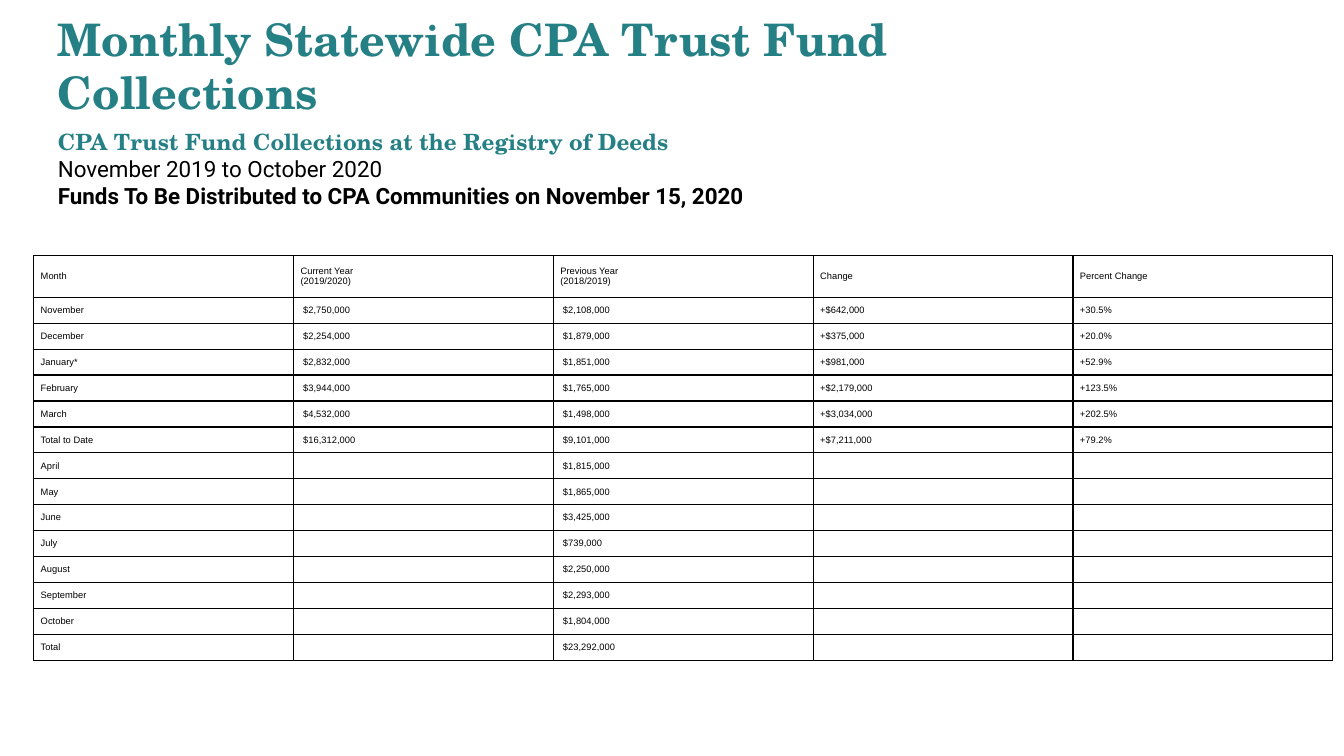
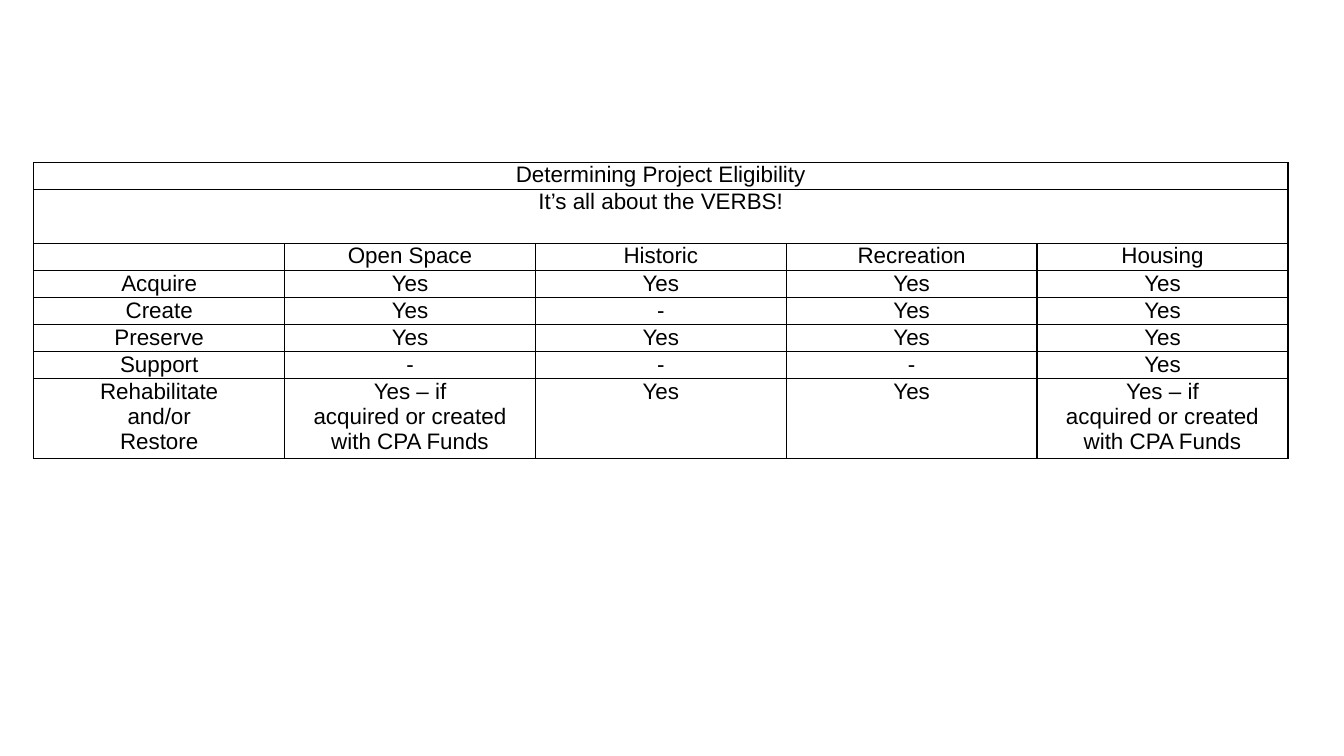
from lxml.etree import SubElement
from pptx import Presentation
from pptx.dml.color import RGBColor
from pptx.enum.text import MSO_ANCHOR, MSO_AUTO_SIZE, PP_ALIGN
from pptx.oxml.ns import qn
from pptx.util import Cm, Pt

TEAL = "258085"
BLACK = "000000"
HEADING_FONT = "TeX Gyre Schola"
TABLE_LEFT = 0.64


def write(text_frame, text, size, font="Arial", color=BLACK, bold=False,
          align=PP_ALIGN.LEFT, space_before=0):
    """Add each line of text as a paragraph, filling an empty first one."""
    for line in text.split("\n"):
        paragraph = text_frame.paragraphs[0]
        if paragraph.runs:
            paragraph = text_frame.add_paragraph()
        paragraph.text = line
        paragraph.alignment = align
        paragraph.space_before = Pt(space_before)
        for run in paragraph.runs:
            run.font.size = Pt(size)
            run.font.name = font
            run.font.bold = bold
            run.font.color.rgb = RGBColor.from_string(color)
        if not line:
            paragraph._p.get_or_add_endParaRPr().set("sz", str(size * 100))


def draw_table(slide, rows, top, column_width, row_heights, side_margin, end_margin,
               size, align, anchor):
    """Draw a bordered table; a row with a single text spans all columns."""
    columns = max(len(row) for row in rows)
    table = slide.shapes.add_table(
        len(rows), columns, Cm(TABLE_LEFT), Cm(top),
        Cm(column_width * columns), Cm(sum(row_heights))).table
    table.first_row = table.horz_banding = False
    for column in table.columns:
        column.width = Cm(column_width)
    for row_index, texts in enumerate(rows):
        table.rows[row_index].height = Cm(row_heights[row_index])
        for column_index in range(columns):
            cell = table.cell(row_index, column_index)
            cell.margin_left = cell.margin_right = Cm(side_margin)
            cell.margin_top = cell.margin_bottom = Cm(end_margin)
            cell.vertical_anchor = anchor
            text = texts[column_index] if column_index < len(texts) else ""
            write(cell.text_frame, text, size, align=align)
            properties = cell._tc.get_or_add_tcPr()
            for side in ("a:lnL", "a:lnR", "a:lnT", "a:lnB"):
                border = SubElement(properties, qn(side), w=str(Pt(0.75)))
                border_fill = SubElement(border, qn("a:solidFill"))
                SubElement(border_fill, qn("a:srgbClr"), val=BLACK)
            cell.fill.background()
        if len(texts) == 1:
            table.cell(row_index, 0).merge(table.cell(row_index, columns - 1))
    return table


presentation = Presentation()
presentation.slide_width = Cm(25.4)
presentation.slide_height = Cm(14.29)

# Slide 1: monthly collections
slide = presentation.slides.add_slide(presentation.slide_layouts[5])
collections = [
    ("Month", "Current Year\n(2019/2020)", "Previous Year\n(2018/2019)",
     "Change", "Percent Change"),
    ("November", "$2,750,000", "$2,108,000", "+$642,000", "+30.5%"),
    ("December", "$2,254,000", "$1,879,000", "+$375,000", "+20.0%"),
    ("January*", "$2,832,000", "$1,851,000", "+$981,000", "+52.9%"),
    ("February", "$3,944,000", "$1,765,000", "+$2,179,000", "+123.5%"),
    ("March", "$4,532,000", "$1,498,000", "+$3,034,000", "+202.5%"),
    ("Total to Date", "$16,312,000", "$9,101,000", "+$7,211,000", "+79.2%"),
    ("April", "", "$1,815,000"),
    ("May", "", "$1,865,000"),
    ("June", "", "$3,425,000"),
    ("July", "", "$739,000"),
    ("August", "", "$2,250,000"),
    ("September", "", "$2,293,000"),
    ("October", "", "$1,804,000"),
    ("Total", "", "$23,292,000"),
]
collections_table = draw_table(
    slide, collections, top=4.83, column_width=4.91,
    row_heights=[0.79] + [0.49] * 14, side_margin=0.13, end_margin=0.08,
    size=5, align=PP_ALIGN.LEFT, anchor=MSO_ANCHOR.MIDDLE)
for row_index in range(1, len(collections)):
    for column_index in (1, 2):
        collections_table.cell(row_index, column_index).margin_left = Cm(0.18)

title = slide.shapes.title
title.left, title.top, title.width, title.height = Cm(0.84), Cm(0.58), Cm(21.08), Cm(3)
heading = title.text_frame
heading.word_wrap = True
heading.auto_size = MSO_AUTO_SIZE.NONE
heading.vertical_anchor = MSO_ANCHOR.MIDDLE
write(heading, "Monthly Statewide CPA Trust Fund Collections", 24,
      font=HEADING_FONT, color=TEAL, bold=True)
write(heading, "CPA Trust Fund Collections at the Registry of Deeds", 12,
      font=HEADING_FONT, color=TEAL, bold=True, space_before=5)
write(heading, "November 2019 to October 2020", 12, font="Roboto")
write(heading, "Funds To Be Distributed to CPA Communities on November 15, 2020", 12,
      font="Roboto", bold=True)

# Slide 2: project eligibility
slide = presentation.slides.add_slide(presentation.slide_layouts[6])
with_funds = "Yes – if\vacquired or created\vwith CPA Funds"
eligibility = [
    ("Determining Project Eligibility",),
    ("It’s all about the VERBS!",),
    ("", "Open Space", "Historic", "Recreation", "Housing"),
    ("Acquire", "Yes", "Yes", "Yes", "Yes"),
    ("Create", "Yes", "-", "Yes", "Yes"),
    ("Preserve", "Yes", "Yes", "Yes", "Yes"),
    ("Support", "-", "-", "-", "Yes"),
    ("Rehabilitate\vand/or\vRestore", with_funds, "Yes", "Yes", with_funds),
]
draw_table(
    slide, eligibility, top=3.07, column_width=4.74,
    row_heights=[0.51, 1.02] + [0.51] * 5 + [1.51], side_margin=0.18, end_margin=0,
    size=12, align=PP_ALIGN.CENTER, anchor=MSO_ANCHOR.TOP)

presentation.save("out.pptx")
